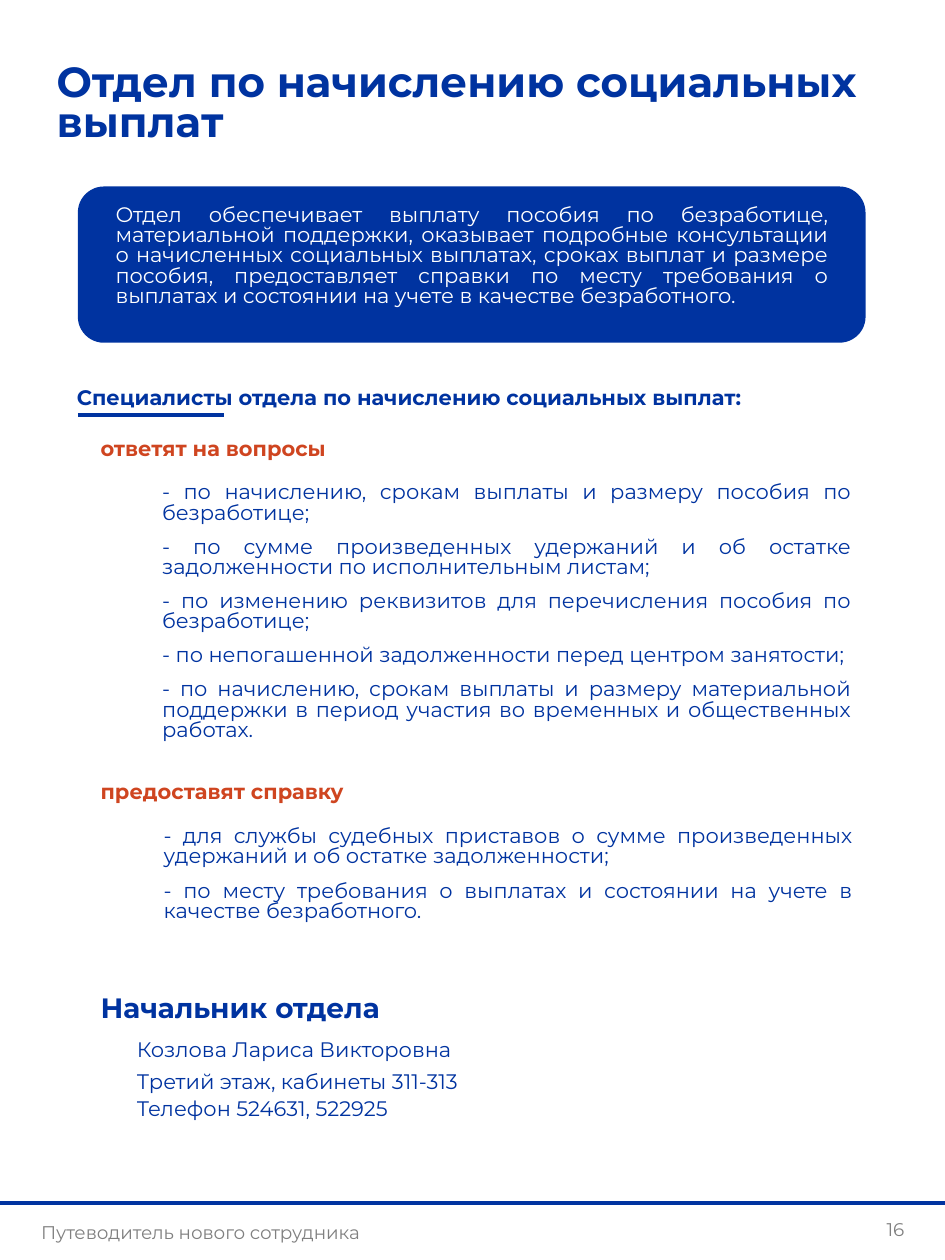
from lxml import etree
from pptx import Presentation
from pptx.dml.color import RGBColor
from pptx.enum import shapes, text
from pptx.oxml import ns
from pptx.util import Cm, Pt

BLUE = RGBColor(0x00, 0x33, 0xA0)
RED = RGBColor(0xCF, 0x45, 0x20)
GREY = RGBColor(0x80, 0x80, 0x80)
WHITE = RGBColor(0xFF, 0xFF, 0xFF)
FONT = "Montserrat"
LEFT, CENTER, JUSTIFY = text.PP_ALIGN.LEFT, text.PP_ALIGN.CENTER, text.PP_ALIGN.JUSTIFY

TITLE = "Отдел по начислению социальных выплат"
TITLE_BOX = (0.89, 1.19, 17.44, 1.9)
CARD_BOX = (1.57, 3.76, 15.88, 3.15)
RULES = [(0, 24.26, 19.05), (1.57, 8.36, 4.52)]

HEADING = dict(bold=True, align=JUSTIFY, spacing=1.1, after=8)
SUBHEADING = dict(HEADING, color=RED)
BODY = dict(align=JUSTIFY, spacing=0.8, after=8)
CONTACT = dict(align=JUSTIFY, spacing=1.1)
FOOTER = dict(size=10.5, color=GREY, align=CENTER)

BLOCKS = [
    ((2.08, 4.04, 14.88, 2.72), dict(BODY, color=WHITE), [
        "Отдел обеспечивает выплату пособия по безработице, материальной поддержки, "
        "оказывает подробные консультации о начисленных социальных выплатах, сроках "
        "выплат и размере пособия, предоставляет справки по месту требования о "
        "выплатах и состоянии на учете в качестве безработного."]),
    ((1.3, 7.57, 14.63, 0.79), HEADING,
     ["Специалисты отдела по начислению социальных выплат:"]),
    ((1.78, 8.61, 6.05, 0.81), SUBHEADING, ["ответят на вопросы"]),
    ((3.02, 9.63, 14.4, 5.92), BODY, [
        "- по начислению, срокам выплаты и размеру пособия по безработице;",
        "- по сумме произведенных удержаний и об остатке задолженности по "
        "исполнительным листам;",
        "- по изменению реквизитов для перечисления пособия по безработице;",
        "- по непогашенной задолженности перед центром занятости;",
        "- по начислению, срокам выплаты и размеру материальной поддержки в период "
        "участия во временных и общественных работах."]),
    ((1.78, 15.52, 7.09, 0.79), SUBHEADING, ["предоставят справку"]),
    ((3.05, 16.56, 14.4, 2.18), BODY, [
        "- для службы судебных приставов о сумме произведенных удержаний и об "
        "остатке задолженности;",
        "- по месту требования о выплатах и состоянии на учете в качестве "
        "безработного."]),
    ((1.78, 19.84, 10.36, 0.94), dict(size=16, bold=True), ["Начальник отдела"]),
    ((2.51, 20.73, 10.36, 0.79), CONTACT, ["Козлова Лариса Викторовна"]),
    ((2.51, 21.36, 10.36, 1.35), CONTACT,
     ["Третий этаж, кабинеты 311-313", "Телефон 524631, 522925"]),
    ((-1.63, 24.49, 11.35, 0.71), FOOTER, ["Путеводитель нового сотрудника"]),
    ((17.48, 24.43, 1.14, 0.71), FOOTER, ["16"]),
]


def write(tf, lines, size=12, color=BLUE, bold=False, align=LEFT, spacing=1.0, after=0):
    tf.word_wrap = True
    tf.auto_size = text.MSO_AUTO_SIZE.NONE
    tf.vertical_anchor = text.MSO_ANCHOR.TOP
    for i, line in enumerate(lines):
        p = tf.add_paragraph() if i else tf.paragraphs[0]
        p.alignment, p.line_spacing = align, spacing
        p.space_before, p.space_after = Pt(0), Pt(after)
        r = p.add_run()
        r.text = line
        r.font.name, r.font.size, r.font.bold = FONT, Pt(size), bold
        r.font.color.rgb = color


def add_rule(s, x1, y, x2):
    line = s.shapes.add_connector(
        shapes.MSO_CONNECTOR.STRAIGHT, Cm(x1), Cm(y), Cm(x2), Cm(y))
    line.line.color.rgb = BLUE
    line.line.width = Pt(2.25)
    etree.SubElement(line._element.spPr, ns.qn("a:effectLst"))


def main():
    prs = Presentation()
    prs.slide_width, prs.slide_height = Cm(19.05), Cm(25.4)
    s = prs.slides.add_slide(prs.slide_layouts[5])

    title = s.shapes.title
    title.left, title.top, title.width, title.height = map(Cm, TITLE_BOX)
    write(title.text_frame, [TITLE], size=24, bold=True, spacing=0.8)

    card = s.shapes.add_shape(
        shapes.MSO_SHAPE.ROUNDED_RECTANGLE, *map(Cm, CARD_BOX))
    card.shadow.inherit = False
    card.fill.solid()
    card.fill.fore_color.rgb = BLUE
    card.line.fill.background()

    for rule in RULES:
        add_rule(s, *rule)
    for box, style, lines in BLOCKS:
        write(s.shapes.add_textbox(*map(Cm, box)).text_frame, lines, **style)

    prs.save("out.pptx")


if __name__ == "__main__":
    main()
